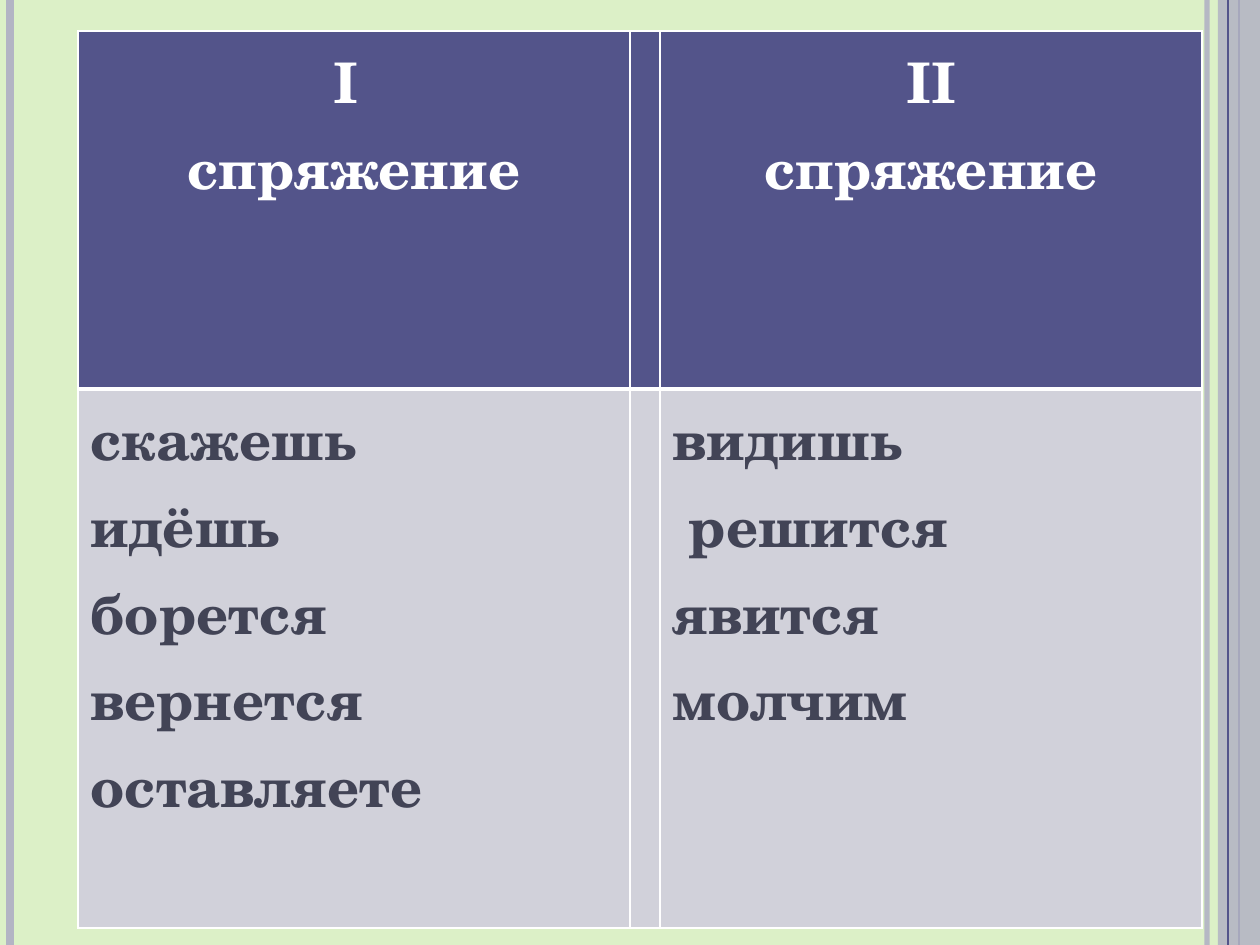
from dataclasses import dataclass

from lxml.etree import SubElement
from pptx import Presentation
from pptx.dml.color import RGBColor
from pptx.enum.shapes import MSO_CONNECTOR, MSO_SHAPE
from pptx.enum.text import PP_ALIGN
from pptx.oxml.ns import qn
from pptx.util import Emu, Pt

PX = 914400 // 126
WIDTH, HEIGHT = 1260, 945
FONT = "TeX Gyre Schola"

PALE_GREEN = RGBColor(0xDC, 0xF0, 0xC7)
GREY = RGBColor(0xB3, 0xB4, 0xC4)
INDIGO = RGBColor(0x53, 0x54, 0x8A)
LILAC = RGBColor(0xD1, 0xD1, 0xDA)
SLATE = RGBColor(0x42, 0x44, 0x56)
WHITE = RGBColor(0xFF, 0xFF, 0xFF)


@dataclass(frozen=True)
class Stripe:
    x: int
    color: RGBColor
    points: float
    opacity: int = 100


@dataclass(frozen=True)
class Row:
    height: int
    fill: RGBColor
    text_color: RGBColor
    align: PP_ALIGN
    columns: tuple[tuple[str, ...], ...]


STRIPES_BEHIND = (
    Stripe(1207, GREY, 3, 93),
    Stripe(10, GREY, 4.5),
    Stripe(1239, INDIGO, 1.5),
)
STRIPE_IN_FRONT = Stripe(1228, INDIGO, 0.75)

COLUMN_WIDTHS = (552, 29, 542)
ROWS = (
    Row(358, INDIGO, WHITE, PP_ALIGN.CENTER,
        (("І ", "спряжение"), (), ("ІІ", " спряжение "))),
    Row(539, LILAC, SLATE, PP_ALIGN.LEFT,
        (("скажешь", "идёшь", "борется", "вернется", "оставляете"), (),
         ("видишь", " решится", "явится", "молчим"))),
)


def px(length: int) -> Emu:
    return Emu(length * PX)


def set_opacity(fill_parent, percent: int) -> None:
    color = fill_parent.find(f"{qn('a:solidFill')}/{qn('a:srgbClr')}")
    SubElement(color, qn("a:alpha"), val=str(percent * 1000))


def draw_stripe(page, stripe: Stripe) -> None:
    line = page.shapes.add_connector(
        MSO_CONNECTOR.STRAIGHT, px(stripe.x), 0, px(stripe.x), px(HEIGHT))
    line.line.color.rgb = stripe.color
    line.line.width = Pt(stripe.points)
    properties = line._element.spPr
    if stripe.opacity < 100:
        set_opacity(properties.find(qn("a:ln")), stripe.opacity)
    SubElement(properties, qn("a:effectLst"))


def draw_side_band(page) -> None:
    left = 1218
    band = page.shapes.add_shape(
        MSO_SHAPE.RECTANGLE, px(left), 0, px(WIDTH - left), px(HEIGHT))
    band.shadow.inherit = False
    band.fill.solid()
    band.fill.fore_color.rgb = GREY
    set_opacity(band._element.spPr, 87)
    band.line.fill.background()


def set_borders(cell, widths: dict[str, int]) -> None:
    properties = cell._tc.get_or_add_tcPr()
    for index, (side, points) in enumerate(widths.items()):
        border = properties.makeelement(qn(f"a:{side}"), {"w": str(Pt(points))})
        fill = SubElement(border, qn("a:solidFill"))
        SubElement(fill, qn("a:srgbClr"), val=str(WHITE))
        properties.insert(index, border)


def write_words(cell, words: tuple[str, ...], row: Row) -> None:
    frame = cell.text_frame
    for index, word in enumerate(words):
        para = frame.add_paragraph() if index else frame.paragraphs[0]
        para.alignment = row.align
        span = para.add_run()
        span.text = word
        span.font.name = FONT
        span.font.size = Pt(32)
        span.font.bold = True
        span.font.color.rgb = row.text_color


def draw_table(page) -> None:
    table = page.shapes.add_table(
        len(ROWS), len(COLUMN_WIDTHS), px(78), px(31),
        px(sum(COLUMN_WIDTHS)), px(sum(row.height for row in ROWS))).table
    for column, width in zip(table.columns, COLUMN_WIDTHS):
        column.width = px(width)
    for row_index, row in enumerate(ROWS):
        table.rows[row_index].height = px(row.height)
        # The rule between header and body is heavier
        top, bottom = (1, 3) if row_index == 0 else (3, 1)
        for column_index, words in enumerate(row.columns):
            cell = table.cell(row_index, column_index)
            cell.fill.solid()
            cell.fill.fore_color.rgb = row.fill
            set_borders(cell, {"lnL": 1, "lnR": 1, "lnT": top, "lnB": bottom})
            write_words(cell, words, row)


def main() -> None:
    deck = Presentation()
    deck.slide_width, deck.slide_height = px(WIDTH), px(HEIGHT)
    page = deck.slides.add_slide(deck.slide_layouts[6])
    page.background.fill.solid()
    page.background.fill.fore_color.rgb = PALE_GREEN

    # Edge decoration
    for stripe in STRIPES_BEHIND:
        draw_stripe(page, stripe)
    draw_side_band(page)
    draw_stripe(page, STRIPE_IN_FRONT)

    # Verbs by conjugation
    draw_table(page)
    deck.save("out.pptx")


if __name__ == "__main__":
    main()
